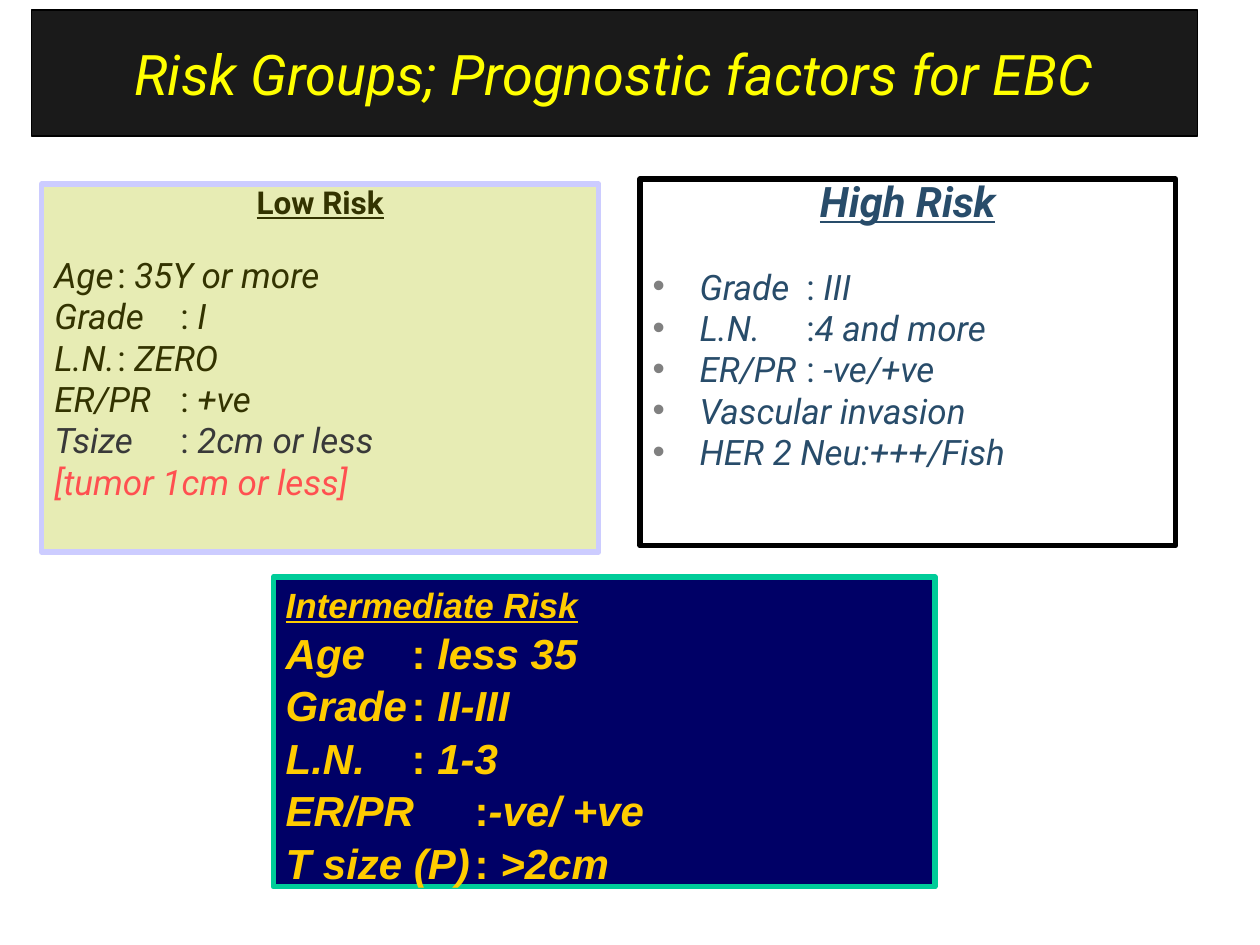
from lxml.etree import SubElement
from pptx import Presentation
from pptx.dml.color import RGBColor
from pptx.enum.shapes import MSO_SHAPE
from pptx.enum.text import MSO_ANCHOR, MSO_AUTO_SIZE, PP_ALIGN
from pptx.oxml.ns import qn
from pptx.util import Cm, Pt


def rgb(value):
    return RGBColor.from_string(value)


class SlideBuilder:
    def __init__(self, s, font):
        self.s = s
        self.font = font

    def frame(self, sp, box, fill, line, width):
        sp.left, sp.top, sp.width, sp.height = (Cm(v) for v in box)
        if fill:
            sp.fill.solid()
            sp.fill.fore_color.rgb = rgb(fill)
        else:
            sp.fill.background()
        sp.line.color.rgb = rgb(line)
        sp.line.width = Pt(width)
        tf = sp.text_frame
        tf.word_wrap = True
        tf.auto_size = MSO_AUTO_SIZE.NONE
        tf.vertical_anchor = MSO_ANCHOR.TOP
        return tf

    def run(self, p, text, size, color, font=None, bold=False, italic=True, underline=False):
        r = p.add_run()
        r.text = text
        f = r.font
        f.name = font or self.font
        f.size = Pt(size)
        f.bold, f.italic, f.underline = bold, italic, underline
        f.color.rgb = rgb(color)

    def layout(self, p, tabs=(), bullet=None):
        pPr = p._p.get_or_add_pPr()
        margin = Cm(0.95) if bullet else 0
        pPr.set("marL", str(margin))
        pPr.set("indent", str(-margin))
        if bullet:
            clr = SubElement(pPr, qn("a:buClr"))
            SubElement(clr, qn("a:srgbClr"), val=bullet)
            SubElement(pPr, qn("a:buFont"), typeface="Arial")
            SubElement(pPr, qn("a:buChar"), char="•")
        else:
            SubElement(pPr, qn("a:buNone"))
        if tabs:
            tab_list = SubElement(pPr, qn("a:tabLst"))
            for tab in tabs:
                SubElement(tab_list, qn("a:tab"), pos=str(Cm(tab)), algn="l")

    def title(self, text, box):
        tf = self.frame(self.s.shapes.title, box, "1A1A1A", "000000", 0.75)
        tf.vertical_anchor = MSO_ANCHOR.MIDDLE
        p = tf.paragraphs[0]
        p.alignment = PP_ALIGN.CENTER
        self.run(p, text, 32, "FFFF00")

    def heading(self, tf, text, size, color, align, spacing, **style):
        p = tf.paragraphs[0]
        p.alignment = align
        p.line_spacing = spacing
        p.space_before = Pt(0)
        self.layout(p)
        self.run(p, text, size, color, bold=True, underline=True, **style)

    def factors(self, tf, rows, size, gaps, spacing, tabs, bullet=None, **style):
        for i, (text, color) in enumerate(rows):
            p = tf.add_paragraph()
            p.alignment = PP_ALIGN.LEFT
            p.line_spacing = spacing
            p.space_before = Pt(gaps[min(i, 1)])
            self.layout(p, tabs, bullet)
            if "\t" in text:
                label, colon, value = text.partition(":")
                self.run(p, label, size, color, **style)
                self.run(p, colon, size, color, italic=False, **style)
                self.run(p, value, size, color, **style)
            else:
                self.run(p, text, size, color, **style)

    def body(self, idx, box, fill, line):
        return self.frame(self.s.placeholders[idx], box, fill, line, 3)

    def panel(self, box, fill, line):
        sp = self.s.shapes.add_shape(MSO_SHAPE.RECTANGLE, *(Cm(v) for v in box))
        sp.shadow.inherit = False
        return self.frame(sp, box, fill, line, 3)


def main():
    prs = Presentation()
    prs.slide_width, prs.slide_height = Cm(25.4), Cm(19.05)
    s = prs.slides.add_slide(prs.slide_layouts[3])
    b = SlideBuilder(s, "Roboto")
    b.title("Risk Groups; Prognostic factors for EBC", (0.64, 0.2, 23.5, 2.54))

    olive, blue, gold = "333300", "284C6A", "FFCC00"
    low = b.body(1, (0.84, 3.71, 11.23, 7.42), "E7ECB4", "CCCCFF")
    b.heading(low, "Low Risk", 18, olive, PP_ALIGN.CENTER, 0.8, italic=False)
    low_rows = [
        ("Age\t: 35Y or more", olive),
        ("Grade\t: I", olive),
        ("L.N.\t: ZERO", olive),
        ("ER/PR\t: +ve", olive),
        ("Tsize\t: 2cm or less", "393939"),
        ("[tumor 1cm or less]", "FF5050"),
    ]
    b.factors(low, low_rows, 20, (23.5, 4.4), 0.8, [2.64])

    high = b.body(2, (12.9, 3.61, 10.8, 7.39), None, "000000")
    b.heading(high, "High Risk", 24, blue, PP_ALIGN.CENTER, 0.8)
    high_rows = ["Grade\t: III", "L.N.\t:4 and more", "ER/PR\t: -ve/+ve",
                 "Vascular invasion", "HER 2 Neu:+++/Fish"]
    b.factors(high, [(t, blue) for t in high_rows], 20, (27.2, 4.4), 0.8,
              [2.13, 3.1], bullet="808080")

    mid = b.panel((5.51, 11.63, 13.34, 6.25), "000066", "00CC99")
    b.heading(mid, "Intermediate Risk", 20, gold, PP_ALIGN.LEFT, 1, font="Arial")
    mid_rows = ["Age\t: less 35", "Grade\t: II-III", "L.N.\t: 1-3",
                "ER/PR\t:-ve/ +ve", "T size (P)\t: >2cm"]
    b.factors(mid, [(t, gold) for t in mid_rows], 24, (1.2, 1.2), 1, [3.97],
              font="Arial", bold=True)

    prs.save("out.pptx")


if __name__ == "__main__":
    main()
